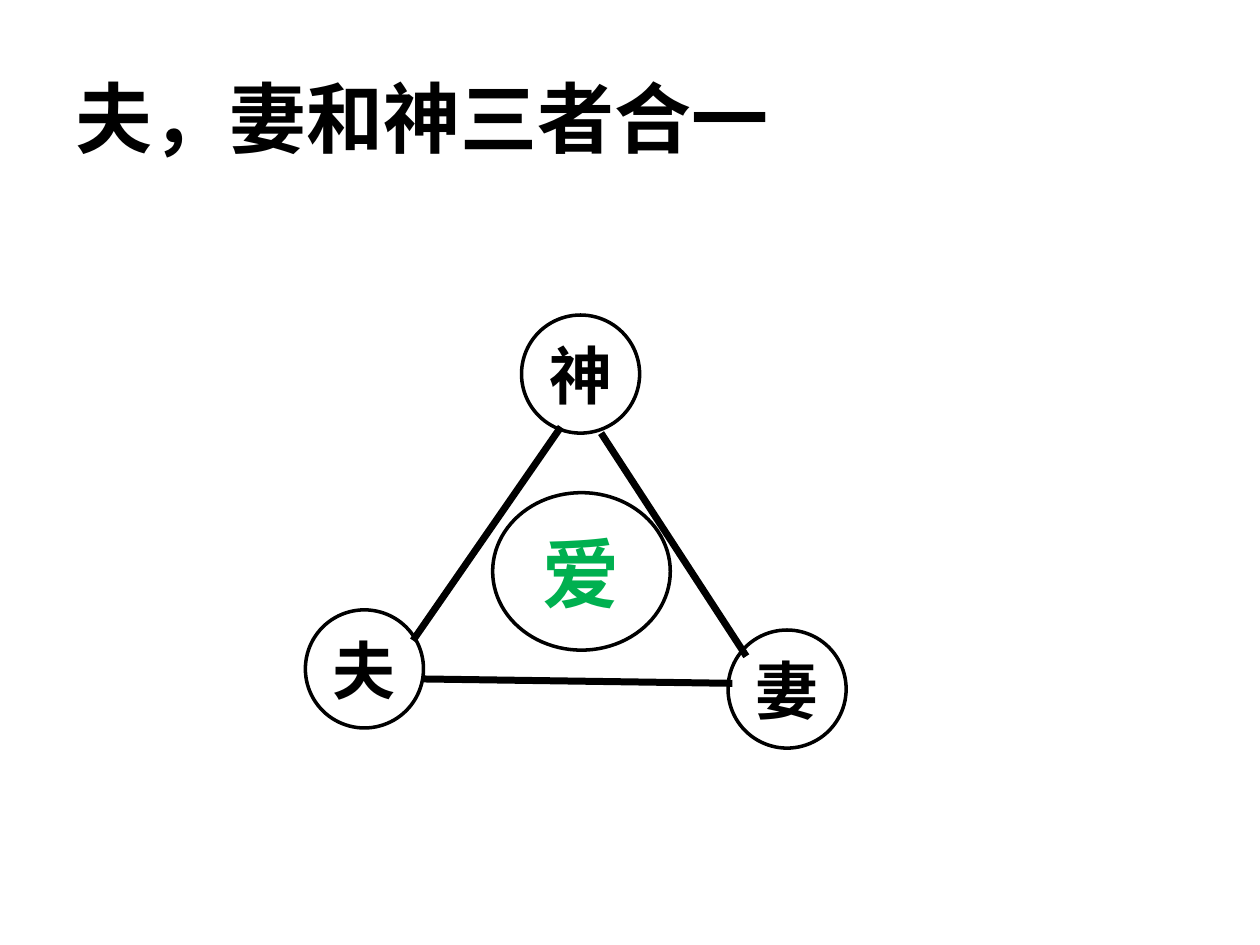
from pptx import Presentation
from pptx.dml.color import RGBColor
from pptx.enum.shapes import MSO_CONNECTOR, MSO_SHAPE
from pptx.enum.text import MSO_ANCHOR, PP_ALIGN
from pptx.oxml.ns import qn
from pptx.util import Pt
from lxml import etree

BLACK = RGBColor(0x00, 0x00, 0x00)
GREEN = RGBColor(0x00, 0xB0, 0x50)
OVAL = MSO_SHAPE.OVAL
STRAIGHT = MSO_CONNECTOR.STRAIGHT
MIDDLE = MSO_ANCHOR.MIDDLE
LEFT, CENTER = PP_ALIGN.LEFT, PP_ALIGN.CENTER
FONT = {"name": "Calibri", "bold": True}
TIGHT = {"margin_left": 0, "margin_right": 0, "margin_top": 0,
         "margin_bottom": 0, "word_wrap": False}
SIDES = [(242, 388, 418.5, 390.5), (236, 366, 320.5, 244), (426.5, 375, 343.5, 247.5)]
DISC = 67.5
ROLES = [("夫", 174.5, 348.5), ("妻", 416, 360), ("神", 298, 180)]


def assign(item, values):
    """Set each attribute named in values."""
    for name, value in values.items():
        setattr(item, name, value)


def write(shape, text, size, color, align, frame):
    """Put one styled paragraph in a shape."""
    body = shape.text_frame
    assign(body, {"vertical_anchor": MIDDLE, **frame})
    para = body.paragraphs[0]
    para.alignment = align
    run = para.add_run()
    run.text = text
    assign(run.font, {**FONT, "size": Pt(size)})
    run.font.color.rgb = color


def stroke(shape, width):
    """Give a shape a black line."""
    shape.line.color.rgb = BLACK
    shape.line.width = Pt(width)


def add_title(slide, text):
    """Add the heading."""
    box = slide.shapes.add_textbox(Pt(36), Pt(21.6), Pt(648), Pt(90))
    write(box, text, 44, BLACK, LEFT, {"word_wrap": True})


def add_side(slide, ends):
    """Add one side of the triangle."""
    side = slide.shapes.add_connector(STRAIGHT, *map(Pt, ends))
    stroke(side, 4)
    etree.SubElement(side.line._get_or_add_ln().getparent(), qn("a:effectLst"))


def add_oval(slide, text, place, size, color):
    """Add an open oval with one word."""
    oval = slide.shapes.add_shape(OVAL, *map(Pt, place))
    oval.shadow.inherit = False
    oval.fill.background()
    stroke(oval, 2)
    write(oval, text, size, color, CENTER, TIGHT)


def main():
    """Build and save the slide."""
    deck = Presentation()
    assign(deck, {"slide_width": Pt(720), "slide_height": Pt(540)})
    slide = deck.slides.add_slide(deck.slide_layouts[6])
    add_title(slide, "夫，妻和神三者合一")
    for ends in SIDES:
        add_side(slide, ends)
    for text, left, top in ROLES:
        add_oval(slide, text, (left, top, DISC, DISC), 36, BLACK)
    add_oval(slide, "爱", (281.5, 281.5, 101.5, 90), 44, GREEN)
    deck.save("out.pptx")


if __name__ == "__main__":
    main()
